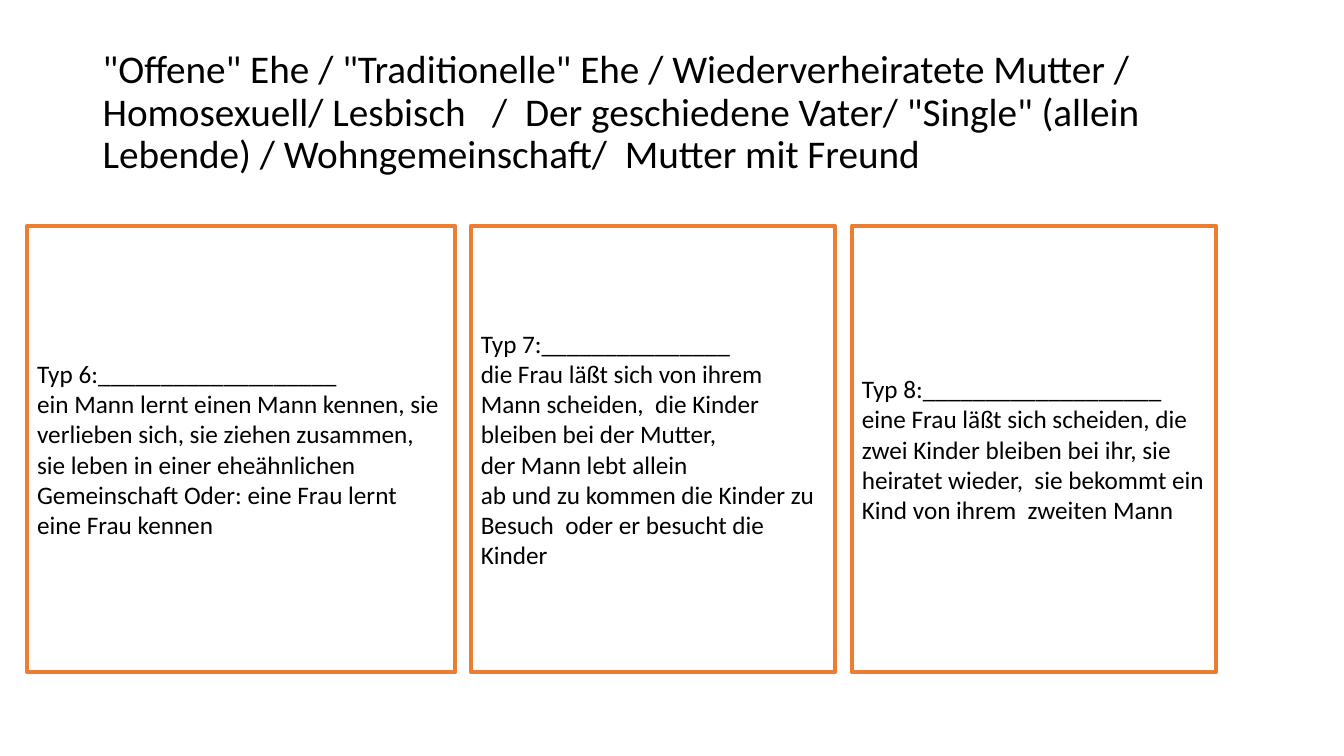
"""Build the slide on family types with three gap-fill cards."""
from dataclasses import dataclass

from pptx import Presentation
from pptx.dml.color import RGBColor
from pptx.enum.shapes import MSO_SHAPE
from pptx.enum.text import MSO_ANCHOR, PP_ALIGN
from pptx.shapes.autoshape import Shape
from pptx.slide import Slide
from pptx.util import Inches, Pt


@dataclass(frozen=True)
class Theme:
    font: str = "Calibri"
    ink: RGBColor = RGBColor(0x00, 0x00, 0x00)
    paper: RGBColor = RGBColor(0xFF, 0xFF, 0xFF)
    border: RGBColor = RGBColor(0xED, 0x7D, 0x31)
    border_width: Pt = Pt(3)
    title_size: Pt = Pt(28)
    card_size: Pt = Pt(18)


@dataclass(frozen=True)
class Card:
    left: float
    width: float
    lines: tuple[str, ...]


THEME = Theme()
CARD_TOP = 2.24
CARD_HEIGHT = 4.43
TITLE = (
    '"Offene" Ehe / "Traditionelle" Ehe / Wiederverheiratete Mutter / '
    'Homosexuell/ Lesbisch   /  Der geschiedene Vater/ "Single" (allein Lebende) / '
    "Wohngemeinschaft/  Mutter mit Freund"
)
CARDS = (
    Card(0.27, 4.24, (
        "Typ 6:___________________",
        "ein Mann lernt einen Mann kennen, sie",
        "verlieben sich, sie ziehen zusammen, sie leben in einer eheähnlichen "
        "Gemeinschaft Oder: eine Frau lernt eine Frau kennen",
    )),
    Card(4.67, 3.61, (
        "Typ 7:_______________",
        "die Frau läßt sich von ihrem Mann scheiden,  die Kinder bleiben bei der Mutter,",
        "der Mann lebt allein",
        "ab und zu kommen die Kinder zu Besuch  oder er besucht die Kinder",
    )),
    Card(8.45, 3.61, (
        "Typ 8:___________________",
        "eine Frau läßt sich scheiden, die",
        "zwei Kinder bleiben bei ihr, sie",
        "heiratet wieder,  sie bekommt ein Kind von ihrem  zweiten Mann",
    )),
)


def write_text(box: Shape, lines: tuple[str, ...], size: Pt, spacing: float = 1.0) -> None:
    """Fill a box with left-aligned, vertically centred paragraphs."""
    frame = box.text_frame
    frame.word_wrap = True
    frame.vertical_anchor = MSO_ANCHOR.MIDDLE
    frame.text = "\n".join(lines)
    for paragraph in frame.paragraphs:
        paragraph.alignment = PP_ALIGN.LEFT
        paragraph.line_spacing = spacing
        paragraph.font.name = THEME.font
        paragraph.font.size = size
        paragraph.font.color.rgb = THEME.ink


def add_title(page: Slide) -> None:
    """Add the list of family types as the slide title."""
    title = page.shapes.add_textbox(Inches(0.92), Inches(0.4), Inches(11.5), Inches(1.45))
    write_text(title, (TITLE,), THEME.title_size, 0.9)


def add_card(page: Slide, card: Card) -> None:
    """Add one bordered card."""
    box = page.shapes.add_shape(
        MSO_SHAPE.RECTANGLE,
        Inches(card.left), Inches(CARD_TOP), Inches(card.width), Inches(CARD_HEIGHT),
    )
    box.shadow.inherit = False
    box.fill.solid()
    box.fill.fore_color.rgb = THEME.paper
    box.line.color.rgb = THEME.border
    box.line.width = THEME.border_width
    write_text(box, card.lines, THEME.card_size)


def main() -> None:
    """Build and save the deck."""
    deck = Presentation()
    deck.slide_width = Inches(13.33)
    deck.slide_height = Inches(7.5)
    page = deck.slides.add_slide(deck.slide_layouts[6])
    add_title(page)
    for card in CARDS:
        add_card(page, card)
    deck.save("out.pptx")


if __name__ == "__main__":
    main()
